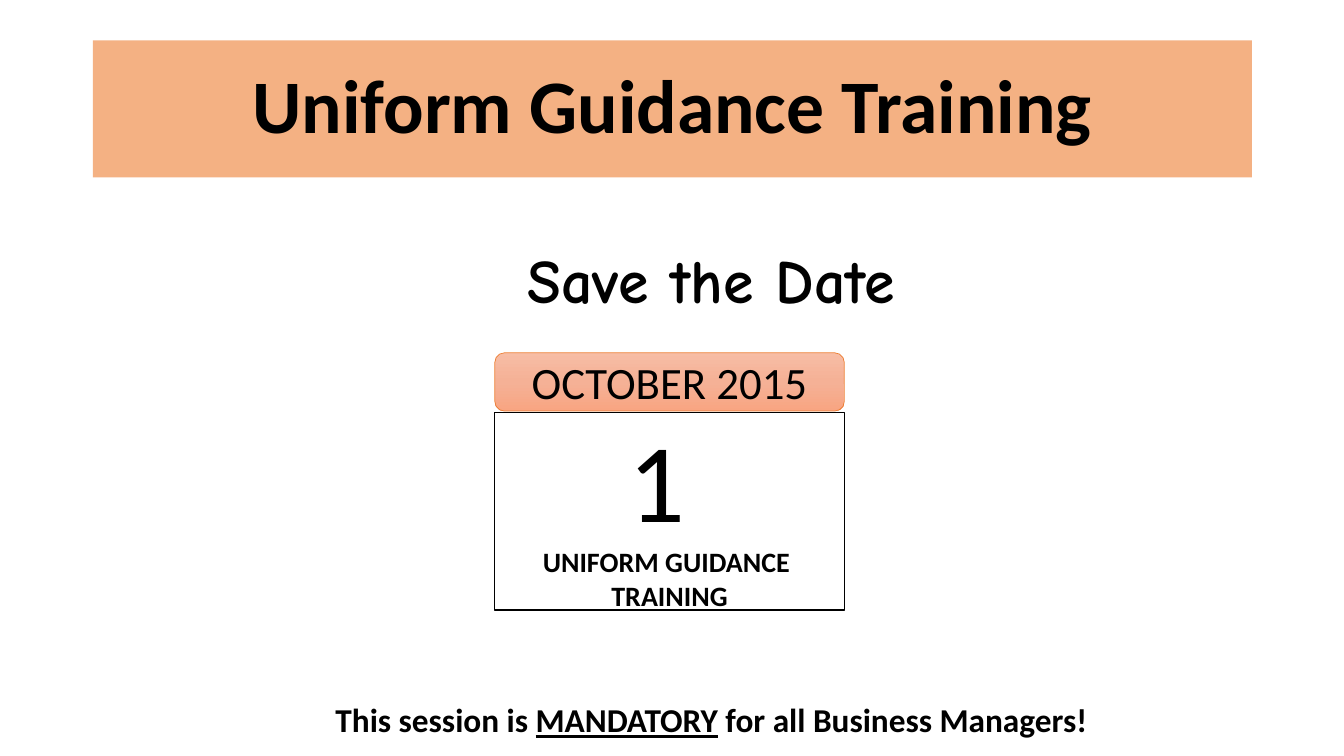
import copy
from dataclasses import dataclass

import pptx
import pptx.dml.color
import pptx.enum.shapes
import pptx.enum.text
import pptx.util

Cm = pptx.util.Cm
Pt = pptx.util.Pt
SHAPES = pptx.enum.shapes.MSO_SHAPE
ALIGN = pptx.enum.text.PP_ALIGN
ANCHOR = pptx.enum.text.MSO_ANCHOR


@dataclass(frozen=True)
class Theme:
    body_font: str = "Calibri"
    invitation_font: str = "Comic Neue"
    ink: str = "000000"
    paper: str = "FFFFFF"
    banner: str = "F4B183"
    month_line: str = "ED7D31"
    month_stops: tuple = ((0, "F7BDA5"), (0.5, "F5B196"), (1, "F8A582"))
    title_size: float = 54
    invitation_size: float = 44.2
    month_size: float = 32
    day_size: float = 80
    event_size: float = 20
    notice_size: float = 23.8


THEME = Theme()

# Each paragraph is a list of runs: (text, size, bold, underlined)
TITLE = [[("Uniform Guidance Training", THEME.title_size, True, False)]]
INVITATION = [[("Save the Date", THEME.invitation_size, True, False)]]
MONTH = [[("OCTOBER 2015", THEME.month_size, False, False)]]
DAY = [
    [("1 ", THEME.day_size, False, False)],
    [("UNIFORM GUIDANCE ", THEME.event_size, True, False)],
    [("TRAINING", THEME.event_size, True, False)],
]
NOTICE = [[
    ("This session is ", THEME.notice_size, True, False),
    ("MANDATORY", THEME.notice_size, True, True),
    (" for all Business Managers!", THEME.notice_size, True, False),
]]

SLIDE_SIZE = (33.87, 19.05)
BANNER_BOX = (2.34, 1.02, 29.21, 3.45)
BODY_LEFT, BODY_WIDTH = 2.34, 31.17
INVITATION_BOX = (BODY_LEFT, 6.02, BODY_WIDTH, 2.03)
NOTICE_BOX = (BODY_LEFT, 17.5, BODY_WIDTH, 1.27)
CALENDAR_LEFT, CALENDAR_WIDTH = 12.47, 8.81
MONTH_BOX = (CALENDAR_LEFT, 8.89, CALENDAR_WIDTH, 1.47)
DAY_BOX = (CALENDAR_LEFT, 10.39, CALENDAR_WIDTH, 4.98)


def rgb(code):
    return pptx.dml.color.RGBColor.from_string(code)


def write(holder, paragraphs, font=THEME.body_font, line_spacing=1.0):
    frame = holder.text_frame
    frame.word_wrap = True
    frame.auto_size = pptx.enum.text.MSO_AUTO_SIZE.NONE
    frame.vertical_anchor = ANCHOR.MIDDLE
    for index, runs in enumerate(paragraphs):
        paragraph = frame.add_paragraph() if index else frame.paragraphs[0]
        paragraph.alignment = ALIGN.CENTER
        paragraph.line_spacing = line_spacing
        for text, size, bold, underlined in runs:
            run = paragraph.add_run()
            run.text = text
            run.font.name = font
            run.font.size = Pt(size)
            run.font.bold = bold
            run.font.underline = underlined
            run.font.color.rgb = rgb(THEME.ink)


def add_panel(slide, preset, box, line_color, line_width):
    panel = slide.shapes.add_shape(preset, *map(Cm, box))
    panel.shadow.inherit = False
    panel.line.color.rgb = rgb(line_color)
    panel.line.width = Pt(line_width)
    return panel


def shade_downwards(fill, stops):
    """Fill with a top-to-bottom gradient of three stops."""
    fill.gradient()
    fill.gradient_angle = 270
    first = fill._fill._gradFill.gsLst[0]
    first.addnext(copy.deepcopy(first))
    for stop, (position, color) in zip(fill.gradient_stops, stops):
        stop.position = position
        stop.color.rgb = rgb(color)


def main():
    deck = pptx.Presentation()
    deck.slide_width, deck.slide_height = map(Cm, SLIDE_SIZE)
    slide = deck.slides.add_slide(deck.slide_layouts[5])

    title = slide.shapes.title
    title.left, title.top, title.width, title.height = map(Cm, BANNER_BOX)
    title.fill.solid()
    title.fill.fore_color.rgb = rgb(THEME.banner)
    write(title, TITLE, line_spacing=0.9)

    invitation = slide.shapes.add_textbox(*map(Cm, INVITATION_BOX))
    write(invitation, INVITATION, THEME.invitation_font)

    month = add_panel(slide, SHAPES.ROUNDED_RECTANGLE, MONTH_BOX, THEME.month_line, 0.5)
    shade_downwards(month.fill, THEME.month_stops)
    write(month, MONTH)

    day = add_panel(slide, SHAPES.RECTANGLE, DAY_BOX, THEME.ink, 1)
    day.fill.solid()
    day.fill.fore_color.rgb = rgb(THEME.paper)
    write(day, DAY)

    notice = slide.shapes.add_textbox(*map(Cm, NOTICE_BOX))
    write(notice, NOTICE)

    deck.save("out.pptx")


if __name__ == "__main__":
    main()
